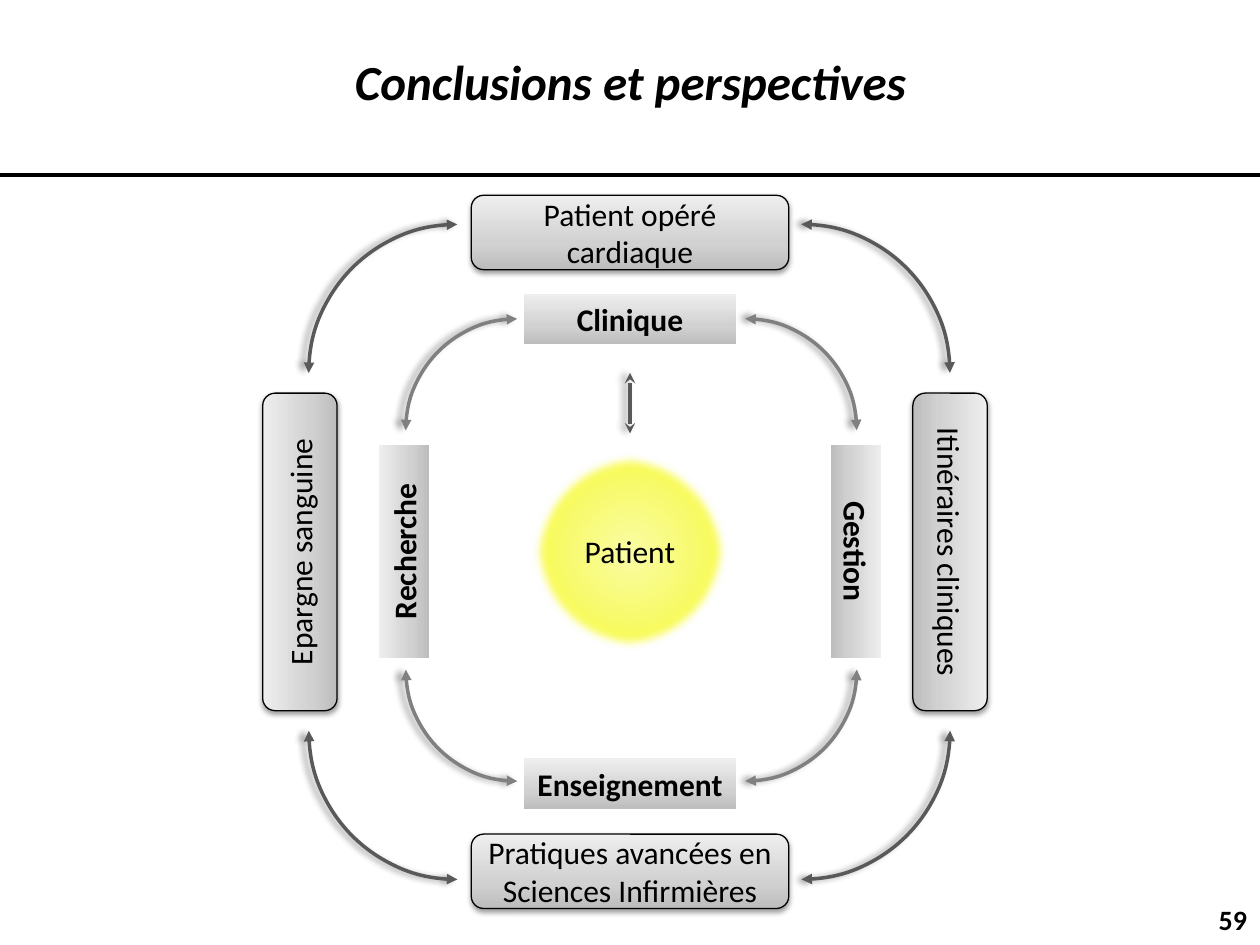
from collections import namedtuple

from lxml.etree import SubElement
from pptx import Presentation
from pptx.dml.color import RGBColor
from pptx.enum.shapes import MSO_CONNECTOR, MSO_SHAPE
from pptx.enum.text import MSO_ANCHOR, PP_ALIGN
from pptx.oxml.ns import qn
from pptx.util import Inches, Pt

COLORS = {
    "ink": "000000", "paper": "FFFFFF", "dark": "595959", "mid": "808080",
    "steel": ((0, "BDBDBD"), (35, "D1D1D1"), (100, "EEEEEE")),
    "sun": ((0, "FBFDA5"), (50, "F8FB69"), (100, "FFFF21")),
}
FONT = "Calibri"
COLUMNS, ROWS = 100, 75  # square grid cells over the whole slide
WIDTH, HEIGHT = Inches(10), Inches(7.5)
Box = namedtuple("Box", "left top width height")


def column(count):
    return round(WIDTH * count / COLUMNS)


def row(count):
    return round(HEIGHT * count / ROWS)


def centred(x, y, width, height):
    return Box(x - width / 2, y - height / 2, width, height)


def on_grid(box):
    return column(box.left), row(box.top), column(box.width), row(box.height)


def add(parent, tag, **attributes):
    return SubElement(parent, qn(f"a:{tag}"), {k: str(v) for k, v in attributes.items()})


def add_effect(shape, shadow=None, soft_edge=None):
    """Replace the theme effect by a (opacity, blur, distance, angle) shadow or a soft edge."""
    effects = add(shape._element.spPr, "effectLst")
    if shadow:
        opacity, blur, distance, angle = shadow
        outer = add(effects, "outerShdw", blurRad=Pt(blur), dist=Pt(distance),
                    dir=angle * 60000, rotWithShape=0)
        color = add(outer, "srgbClr", val=COLORS["ink"])
        add(color, "alpha", val=opacity * 1000)
    if soft_edge:
        add(effects, "softEdge", rad=Pt(soft_edge))


def add_gradient(shape, stops, radial=False):
    properties = shape._element.spPr
    gradient = add(properties, "gradFill", rotWithShape=1)
    stop_list = add(gradient, "gsLst")
    for position, color in stops:
        add(add(stop_list, "gs", pos=position * 1000), "srgbClr", val=color)
    if radial:
        path = add(gradient, "path", path="circle")
        add(path, "fillToRect", l=50000, t=50000, r=50000, b=50000)
    else:
        add(gradient, "lin", ang=270 * 60000, scaled=1)
    properties.find(qn("a:prstGeom")).addnext(gradient)


def set_line(shape, color, width, arrow=None):
    shape.line.color.rgb = RGBColor.from_string(COLORS[color])
    shape.line.width = Pt(width)
    if arrow:
        outline = shape.line._get_or_add_ln()
        add(outline, "headEnd", type=arrow)
        add(outline, "tailEnd", type=arrow)


def write(shape, text, size=18, bold=False, italic=False, wrap=True):
    frame = shape.text_frame
    frame.word_wrap = wrap
    frame.vertical_anchor = MSO_ANCHOR.MIDDLE
    para = frame.paragraphs[0]
    para.alignment = PP_ALIGN.CENTER
    span = para.add_run()
    span.text = text
    span.font.name, span.font.size = FONT, Pt(size)
    span.font.bold, span.font.italic = bold, italic
    span.font.color.rgb = RGBColor.from_string(COLORS["ink"])


def add_banner(page, box, title):
    banner = page.shapes.add_shape(MSO_SHAPE.RECTANGLE, *on_grid(box))
    banner.fill.solid()
    banner.fill.fore_color.rgb = RGBColor.from_string(COLORS["paper"])
    set_line(banner, "ink", 2)
    add_effect(banner)
    write(banner, title, 28, bold=True, italic=True)


def add_tiles(page, box, labels, width, height, framed):
    """Centre four tiles on the sides of box: top, right, bottom, left."""
    middle, centre = COLUMNS / 2, box.top + box.height / 2
    spots = ((middle, box.top, 0), (box.left + box.width, centre, 90),
             (middle, box.top + box.height, 0), (box.left, centre, 270))
    kind = MSO_SHAPE.ROUNDED_RECTANGLE if framed else MSO_SHAPE.RECTANGLE
    for label, (x, y, rotation) in zip(labels, spots):
        tile = page.shapes.add_shape(kind, *on_grid(centred(x, y, width, height)))
        tile.rotation = rotation
        add_gradient(tile, COLORS["steel"])
        if framed:
            set_line(tile, "ink", 0.75)
        else:
            tile.line.fill.background()
        add_effect(tile, shadow=(38, 3.1, 1.6, 90) if framed else None)
        write(tile, label, bold=not framed)


def add_corner_arrows(page, box, size, color):
    """Round the four corners of box with double-headed quarter circles."""
    right, bottom = box.left + box.width - size, box.top + box.height - size
    corners = ((right, box.top), (right, bottom), (box.left, bottom), (box.left, box.top))
    for turn, (left, top) in enumerate(corners):
        arc = page.shapes.add_shape(MSO_SHAPE.ARC, *on_grid(Box(left, top, size, size)))
        arc.rotation = turn * 90
        arc.fill.background()
        set_line(arc, color, 2, "triangle")
        add_effect(arc, shadow=(40, 4, 3, 180))


def add_core(page, box, label, arrow_top, arrow_bottom):
    middle = column(box.left + box.width / 2)
    arrow = page.shapes.add_connector(MSO_CONNECTOR.STRAIGHT, middle, row(arrow_top),
                                      middle, row(arrow_bottom))
    set_line(arrow, "dark", 2, "stealth")
    add_effect(arrow, shadow=(40, 4, 3, 180))

    sun = page.shapes.add_shape(MSO_SHAPE.OVAL, *on_grid(box))
    add_gradient(sun, COLORS["sun"], radial=True)
    sun.line.fill.background()
    add_effect(sun, soft_edge=5)
    write(sun, label)
    frame = sun.text_frame
    frame.margin_left = frame.margin_right = frame.margin_top = frame.margin_bottom = 0


def add_page_number(page, box, number):
    write(page.shapes.add_textbox(*on_grid(box)), number, 16, bold=True, wrap=False)


def main():
    deck = Presentation()
    deck.slide_width, deck.slide_height = WIDTH, HEIGHT
    page = deck.slides.add_slide(deck.slide_layouts[6])

    add_tiles(page, Box(32.05, 25.3, 35.9, 36.9),
              ("Clinique", "Gestion", "Enseignement", "Recherche"), 16.9, 4, framed=False)
    add_corner_arrows(page, Box(32.2, 25.3, 35.8, 36.7), 17.7, "mid")
    add_core(page, Box(42.15, 35.9, 15.7, 15.7), "Patient", 29.6, 34.4)
    add_tiles(page, Box(23.8, 18.45, 51.6, 50.7),
              ("Patient opéré cardiaque", "Itinéraires cliniques",
               "Pratiques avancées en Sciences Infirmières", "Epargne sanguine"),
              25.2, 5.9, framed=True)
    add_corner_arrows(page, Box(24.5, 17.8, 50.9, 52), 23.6, "dark")
    add_banner(page, Box(-4.3, -1, 108.7, 14.9), "Conclusions et perspectives")
    add_page_number(page, Box(95.7, 71, 4.3, 4), "59")
    deck.save("out.pptx")


if __name__ == "__main__":
    main()
